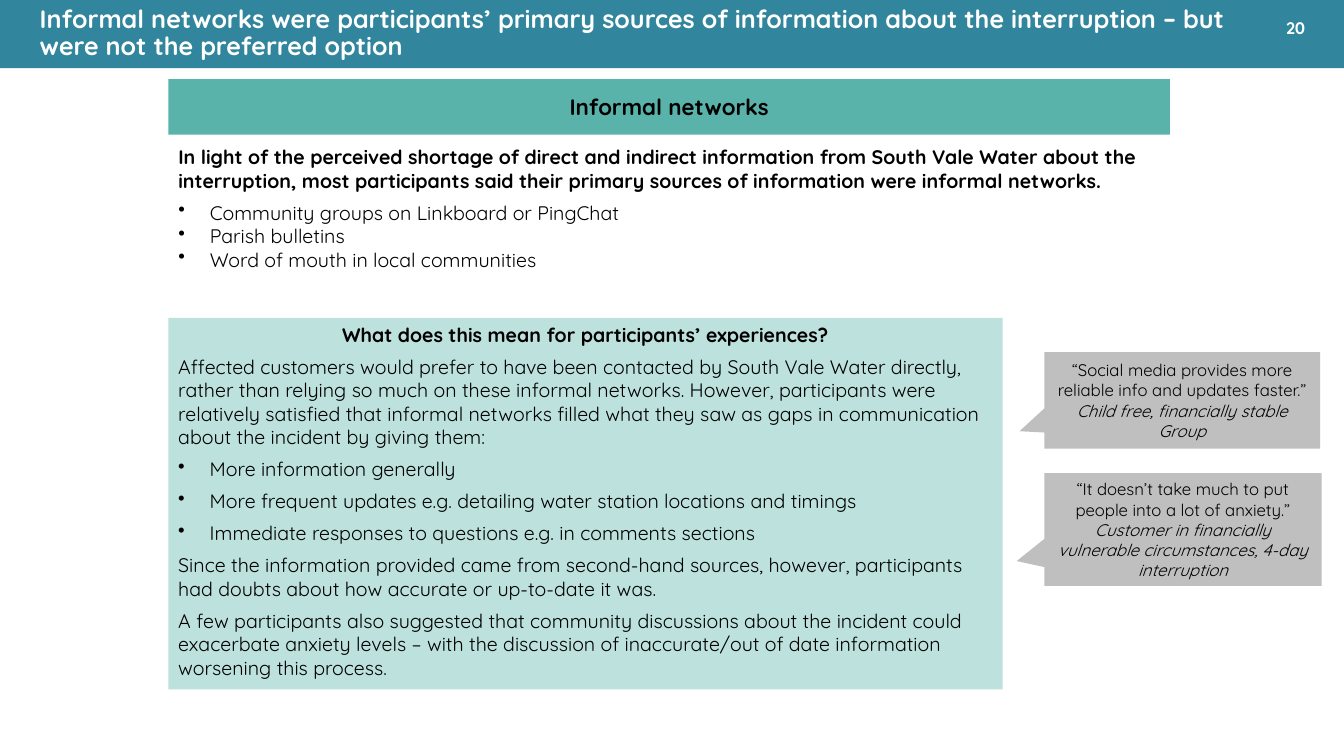
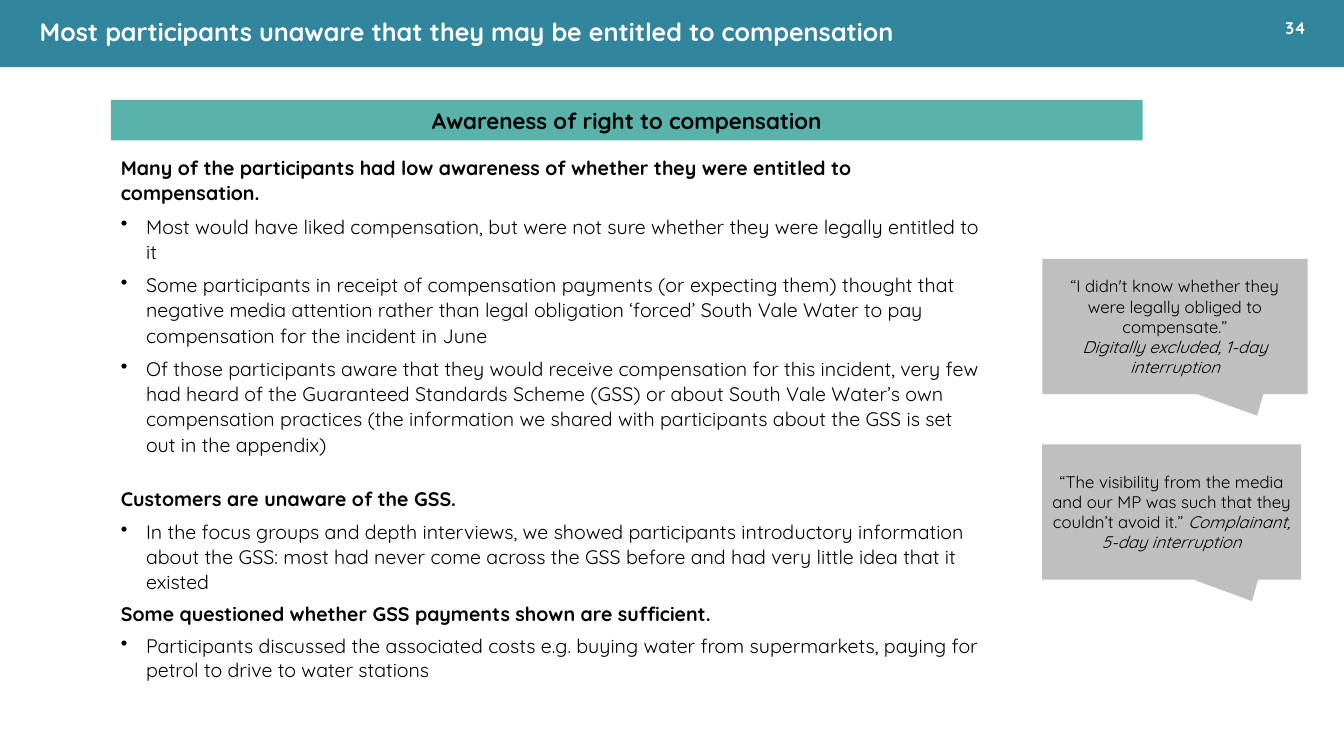
from lxml import etree
from pptx import Presentation
from pptx.dml.color import RGBColor
from pptx.enum import shapes, text as txt
from pptx.oxml import ns
from pptx.util import Pt

FONT = "Quicksand"
BLUE = RGBColor(0x31, 0x85, 0x9C)
TEAL = RGBColor(0x59, 0xB3, 0xAA)
MINT = RGBColor(0xBD, 0xE1, 0xDD)
GREY = RGBColor(0xBF, 0xBF, 0xBF)
BLACK = RGBColor(0, 0, 0)
WHITE = RGBColor(0xFF, 0xFF, 0xFF)
WIDTH, HEIGHT = 960, 540
LEFT, MID = txt.PP_ALIGN.LEFT, txt.PP_ALIGN.CENTER
RECT = shapes.MSO_SHAPE.RECTANGLE
CALLOUT = shapes.MSO_SHAPE.RECTANGULAR_CALLOUT


def say(frame, words, size=14, color=BLACK, bold=False, italic=False,
        align=LEFT, after=0, lead=None, bullet=0, join=False):
    """Write a paragraph; bullet is its indent, join continues the last one."""
    para = frame.paragraphs[-1]
    if para.runs and not join:
        para = frame.add_paragraph()
    if not join:
        if bullet:
            props = para._p.get_or_add_pPr()
            props.set("marL", str(Pt(bullet)))
            props.set("indent", str(-Pt(bullet)))
            etree.SubElement(props, ns.qn("a:buChar"), char="•")
        para.alignment = align
        para.space_before, para.space_after = Pt(0), Pt(after)
        if lead:
            para.line_spacing = lead
    run = para.add_run()
    run.text = words
    font = run.font
    font.name, font.size = FONT, Pt(size)
    font.bold, font.italic = bold, italic
    font.color.rgb = color


def block(slide, kind, box, fill, anchor=txt.MSO_ANCHOR.MIDDLE):
    shape = slide.shapes.add_shape(kind, *map(Pt, box))
    shape.shadow.inherit = False
    shape.fill.solid()
    shape.fill.fore_color.rgb = fill
    shape.line.fill.background()
    shape.text_frame.word_wrap = True
    shape.text_frame.vertical_anchor = anchor
    return shape


def label(slide, box):
    frame = slide.shapes.add_textbox(*map(Pt, box)).text_frame
    frame.word_wrap = True
    return frame


def start(deck, title, number, height):
    """Add a slide with its title band and page number."""
    slide = deck.slides.add_slide(deck.slide_layouts[5])
    band = slide.shapes.title
    band.left, band.top, band.width, band.height = map(
        Pt, (0, 0, WIDTH, height))
    band.fill.solid()
    band.fill.fore_color.rgb = BLUE
    frame = band.text_frame
    frame.word_wrap = True
    frame.auto_size = txt.MSO_AUTO_SIZE.NONE
    frame.vertical_anchor = txt.MSO_ANCHOR.MIDDLE
    frame.margin_left, frame.margin_right = Pt(28.35), Pt(70)
    say(frame, title, size=18, color=WHITE, bold=True, lead=0.9)
    page = label(slide, (897, 1.5, 57, 37))
    page.vertical_anchor = txt.MSO_ANCHOR.MIDDLE
    say(page, number, size=12, color=WHITE, bold=True, align=MID)
    return slide


def header(slide, box, words):
    bar = block(slide, RECT, box, TEAL)
    say(bar.text_frame, words, size=16, bold=True, align=MID)


def points(frame, items, **form):
    for item in items:
        say(frame, item, **form)


def quote(slide, box, tip, speech, who, join=True):
    """Add a callout; tip is the pointer offset from the centre."""
    shape = block(slide, CALLOUT, box, GREY)
    shape.adjustments[0], shape.adjustments[1] = tip
    frame = shape.text_frame
    say(frame, speech, size=12, align=MID)
    say(frame, who, size=12, align=MID, italic=True, join=join)


def networks(deck):
    slide = start(
        deck, "Informal networks were participants’ primary sources of "
        "information about the interruption – but were not the preferred "
        "option", "20", 48.75)
    left, wide = 120.25, 715.5
    header(slide, (left, 56.5, wide, 39.75), "Informal networks")
    intro = label(slide, (left, 100, wide, 103))
    say(intro, "In light of the perceived shortage of direct and indirect "
        "information from South Vale Water about the interruption, most "
        "participants said their primary sources of information were "
        "informal networks.", bold=True, after=6)
    points(intro, ("Community groups on Linkboard or PingChat",
                   "Parish bulletins",
                   "Word of mouth in local communities"), bullet=22.5)

    panel = block(slide, RECT, (left, 227, 596, 265.5), MINT,
                  txt.MSO_ANCHOR.TOP).text_frame
    say(panel, "What does this mean for participants’ experiences?",
        bold=True, align=MID, after=6)
    say(panel, "Affected customers would prefer to have been contacted by "
        "South Vale Water directly, rather than relying so much on these "
        "informal networks. However, participants were relatively satisfied "
        "that informal networks filled what they saw as gaps in "
        "communication about the incident by giving them:", after=6)
    points(panel, (
        "More information generally",
        "More frequent updates e.g. detailing water station locations and "
        "timings",
        "Immediate responses to questions e.g. in comments sections",
    ), bullet=22.5, after=6)
    points(panel, (
        "Since the information provided came from second-hand sources, "
        "however, participants had doubts about how accurate or up-to-date "
        "it was.",
        "A few participants also suggested that community discussions about "
        "the incident could exacerbate anxiety levels – with the discussion "
        "of inaccurate/out of date information worsening this process.",
    ), after=6)

    quote(slide, (746, 251.5, 197, 69), (-0.59, 0.32),
          "“Social media provides more reliable info and updates faster.” ",
          "Child free, financially stable Group")
    quote(slide, (746, 338, 198, 80.5), (-0.6, 0.28),
          "“It doesn’t take much to put people into a lot of anxiety.” ",
          "Customer in financially vulnerable circumstances, 4-day "
          "interruption")


def payments(deck):
    slide = start(deck, "Most participants unaware that they may be entitled "
                  "to compensation", "34", 48)
    left, lead = 79.25, 1.07
    header(slide, (left, 71.25, 737, 29), "Awareness of right to compensation")
    rights = label(slide, (left, 106.5, 629.5, 157))
    say(rights, "Many of the participants had low awareness of whether they "
        "were entitled to compensation.", bold=True, after=6, lead=lead)
    points(rights, (
        "Most would have liked compensation, but were not sure whether they "
        "were legally entitled to it",
        "Some participants in receipt of compensation payments (or expecting "
        "them) thought that negative media attention rather than legal "
        "obligation ‘forced’ South Vale Water to pay compensation for the "
        "incident in June",
        "Of those participants aware that they would receive compensation "
        "for this incident, very few had heard of the Guaranteed Standards "
        "Scheme (GSS) or about South Vale Water’s own compensation practices "
        "(the information we shared with participants about the GSS is set "
        "out in the appendix)",
    ), bullet=18, after=6, lead=lead)

    scheme = label(slide, (left, 342.75, 630.5, 157))
    say(scheme, "Customers are unaware of the GSS.", bold=True, after=6,
        lead=lead)
    say(scheme, "In the focus groups and depth interviews, we showed "
        "participants introductory information about the GSS: most had never "
        "come across the GSS before and had very little idea that it existed",
        bullet=18, after=6, lead=lead)
    say(scheme, "Some questioned whether GSS payments shown are sufficient.",
        bold=True, after=6)
    say(scheme, "Participants discussed the associated costs e.g. buying "
        "water from supermarkets, paying for petrol to drive to water "
        "stations", bullet=18, after=6)

    tip = (0.31, 0.66)
    quote(slide, (744.5, 185, 189.5, 96.5), tip,
          "“I didn't know whether they were legally obliged to compensate.”",
          "Digitally excluded, 1-day interruption", join=False)
    quote(slide, (744.5, 317.5, 185, 96.5), tip,
          "“The visibility from the media and our MP was such that they "
          "couldn’t avoid it.” ", "Complainant, 5-day interruption")


def main():
    deck = Presentation()
    deck.slide_width, deck.slide_height = Pt(WIDTH), Pt(HEIGHT)
    networks(deck)
    payments(deck)
    deck.save("out.pptx")


if __name__ == "__main__":
    main()
